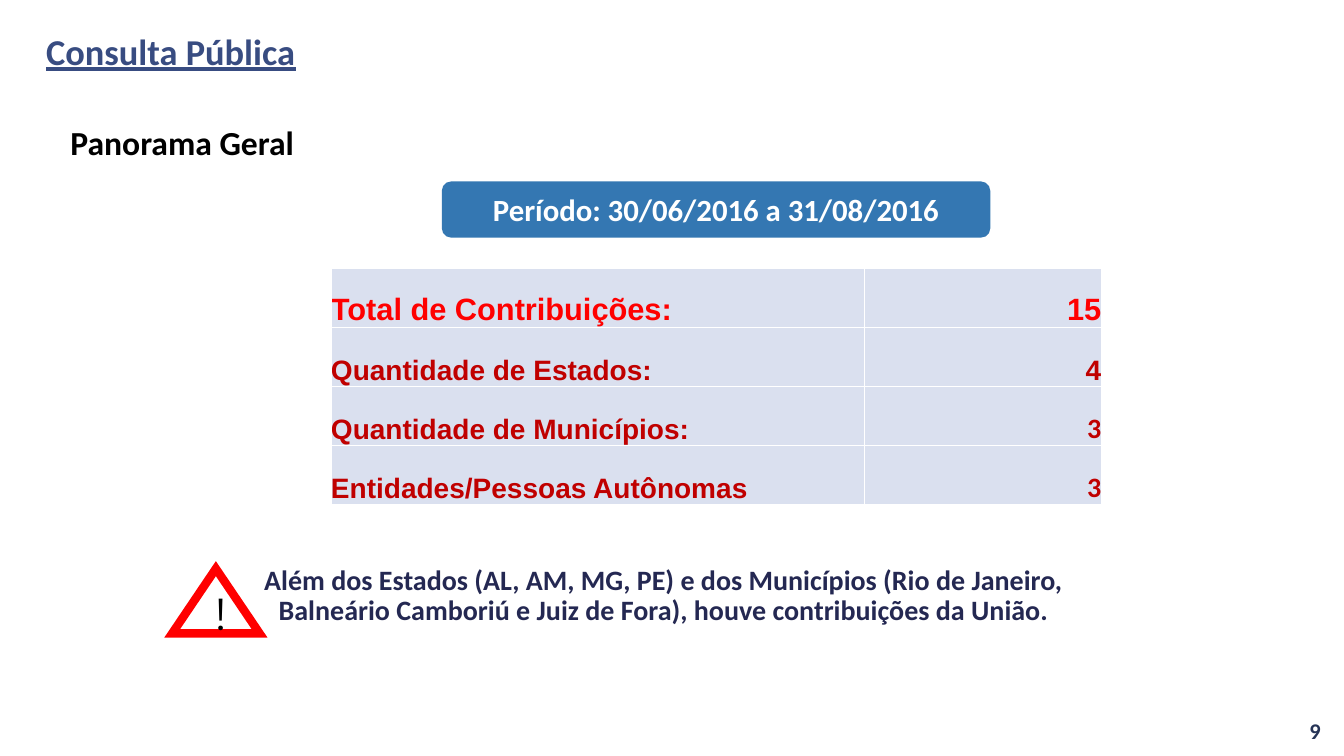
from lxml.etree import SubElement
from pptx import Presentation
from pptx.dml.color import RGBColor
from pptx.enum.shapes import MSO_SHAPE as Shape
from pptx.enum.text import MSO_ANCHOR as Anchor, PP_ALIGN as Align
from pptx.oxml.ns import qn
from pptx.util import Inches, Pt

WHITE = RGBColor(0xFF, 0xFF, 0xFF)
BLACK = RGBColor(0x00, 0x00, 0x00)
TITLE_BLUE = RGBColor(0x38, 0x4C, 0x81)
NOTE_NAVY = RGBColor(0x24, 0x28, 0x52)
NUMBER_NAVY = RGBColor(0x25, 0x33, 0x56)
PERIOD_BLUE = RGBColor(0x34, 0x77, 0xB2)
CELL_BLUE = RGBColor(0xDA, 0xE0, 0xEF)
RED = RGBColor(0xFF, 0x00, 0x00)
DARK_RED = RGBColor(0xC0, 0x00, 0x00)


class SlideBuilder:
    COLUMNS, ROWS = 160, 90
    FONT = "Calibri"

    def __init__(self, deck):
        self.column = deck.slide_width / self.COLUMNS
        self.row = deck.slide_height / self.ROWS
        self.slide = deck.slides.add_slide(deck.slide_layouts[6])
        self.shapes = self.slide.shapes

    def place(self, left, top, width, height):
        return (round(left * self.column), round(top * self.row),
                round(width * self.column), round(height * self.row))

    def fill_text(self, frame, lines, size, color, font=FONT, bold=True,
                  underline=None, align=Align.LEFT, spacing=None):
        frame.word_wrap = True
        for index, line in enumerate(lines):
            para = frame.add_paragraph() if index else frame.paragraphs[0]
            para.text = line
            para.alignment = align
            para.line_spacing = spacing
            para.font.name = font
            para.font.size = Pt(size)
            para.font.bold = bold
            para.font.underline = underline
            para.font.color.rgb = color

    def text(self, area, lines, size, color, anchor=Anchor.TOP, **style):
        box = self.shapes.add_textbox(*self.place(*area))
        box.text_frame.vertical_anchor = anchor
        self.fill_text(box.text_frame, lines, size, color, **style)
        return box

    def shape(self, kind, area, fill, line=None, line_width=0):
        shape = self.shapes.add_shape(kind, *self.place(*area))
        shape.shadow.inherit = False
        shape.fill.solid()
        shape.fill.fore_color.rgb = fill
        if line is None:
            shape.line.fill.background()
        else:
            shape.line.color.rgb = line
            shape.line.width = Pt(line_width)
            outline = shape.element.spPr.find(qn("a:ln"))
            SubElement(outline, qn("a:miter"), lim="800000")
        return shape

    def border(self, cell, color):
        properties = cell._tc.get_or_add_tcPr()
        for side in ("lnL", "lnR", "lnT", "lnB"):
            edge = SubElement(properties, qn(f"a:{side}"), w=str(Pt(1)))
            fill = SubElement(edge, qn("a:solidFill"))
            SubElement(fill, qn("a:srgbClr"), val=str(color))

    def table(self, left, top, widths, row_height, records):
        area = self.place(left, top, sum(widths), row_height * len(records))
        table = self.shapes.add_table(len(records), len(widths), *area).table
        table.first_row = table.horz_banding = False
        for column, width in zip(table.columns, widths):
            column.width = round(width * self.column)
        for row, (label, value, size, color, value_font) in zip(table.rows, records):
            row.height = round(row_height * self.row)
            contents = ((label, "Arial", Align.LEFT), (value, value_font, Align.RIGHT))
            for cell, (content, font, align) in zip(row.cells, contents):
                cell.margin_left = cell.margin_right = 0
                cell.margin_top = cell.margin_bottom = 0
                cell.vertical_anchor = Anchor.BOTTOM
                self.border(cell, WHITE)
                cell.fill.solid()
                cell.fill.fore_color.rgb = CELL_BLUE
                self.fill_text(cell.text_frame, [content], size, color,
                               font=font, align=align)

    def warning(self, sign_area, mark_area):
        sign = self.shape(Shape.ISOSCELES_TRIANGLE, sign_area, WHITE, RED, 6)
        mark = self.text(mark_area, ["!"], 32, BLACK, font="Montserrat",
                         bold=False, align=Align.CENTER)
        self.shapes.add_group_shape([sign, mark])


def main():
    deck = Presentation()
    deck.slide_width, deck.slide_height = Inches(13.33), Inches(7.5)
    page = SlideBuilder(deck)

    page.text((4.3, -2.3, 138, 17.4), ["Consulta Pública"], 26, TITLE_BLUE,
              anchor=Anchor.MIDDLE, underline=True, spacing=0.9)
    page.text((7.2, 14.5, 143.6, 5.5), ["Panorama Geral"], 24, BLACK, spacing=0.9)
    page.text((7.2, 66.8, 143.6, 8.5),
              ["Além dos Estados (AL, AM, MG, PE) e dos Municípios (Rio de Janeiro,",
               "Balneário Camboriú e Juiz de Fora), houve contribuições da União."],
              20, NOTE_NAVY, align=Align.CENTER, spacing=0.9)
    page.text((122.4, 84.6, 36, 4.8), ["9"], 16, NUMBER_NAVY,
              anchor=Anchor.MIDDLE, align=Align.RIGHT)

    page.table(39.4, 31.9, (63.5, 28.2), 7.05, [
        ("Total de Contribuições:", "15", 22, RED, "Arial"),
        ("Quantidade de Estados:", "4", 20, DARK_RED, "Arial"),
        ("Quantidade de Municípios:", "3", 20, DARK_RED, "Calibri"),
        ("Entidades/Pessoas Autônomas", "3", 20, DARK_RED, "Calibri"),
    ])

    period = page.shape(Shape.ROUNDED_RECTANGLE, (52.6, 21.6, 65.3, 6.7), PERIOD_BLUE)
    page.fill_text(period.text_frame, ["Período: 30/06/2016 a 31/08/2016"], 22, WHITE,
                   align=Align.CENTER)
    page.warning((20.5, 67.7, 10.4, 7.7), (24.4, 69.1, 2.5, 7.7))

    deck.save("out.pptx")


if __name__ == "__main__":
    main()
